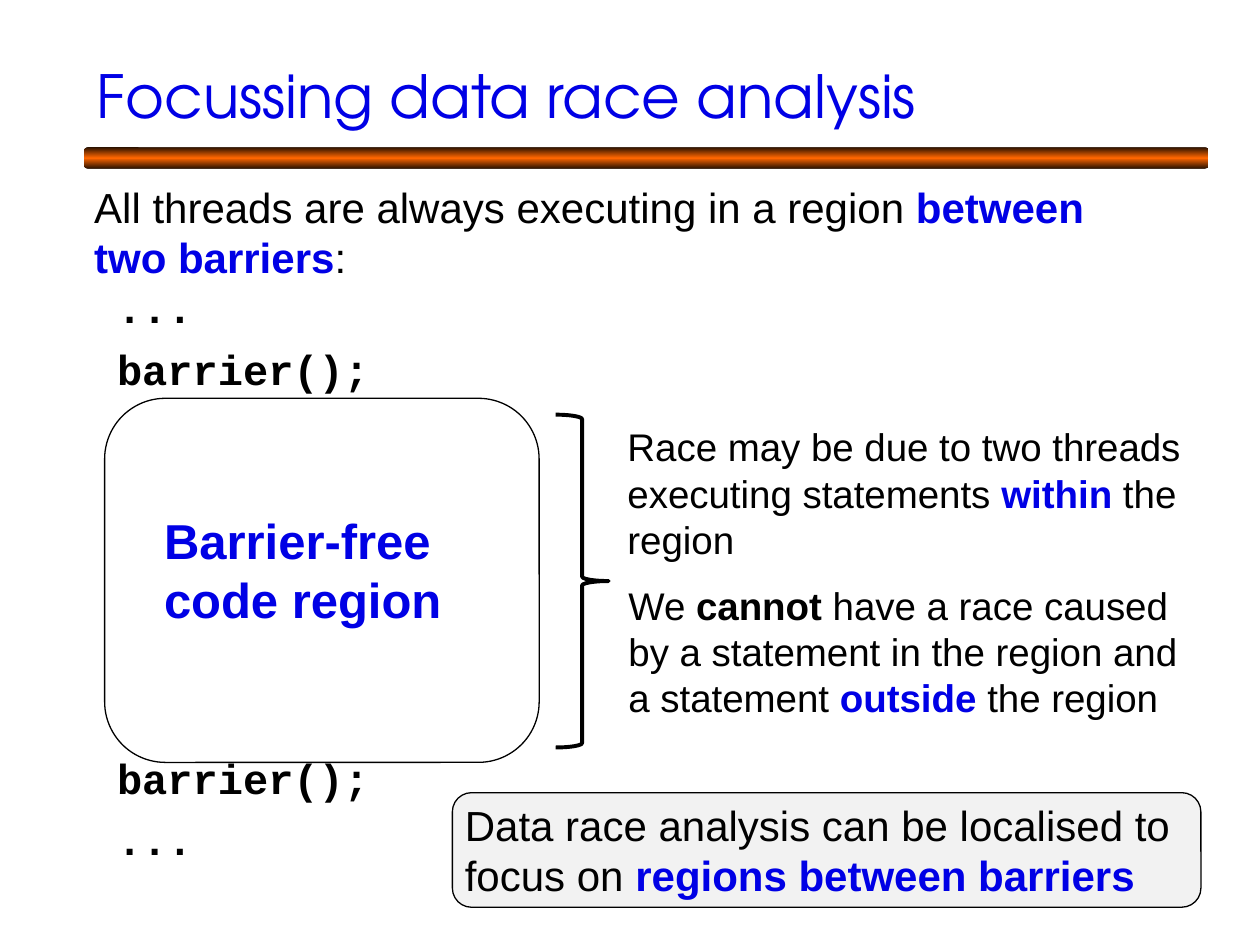
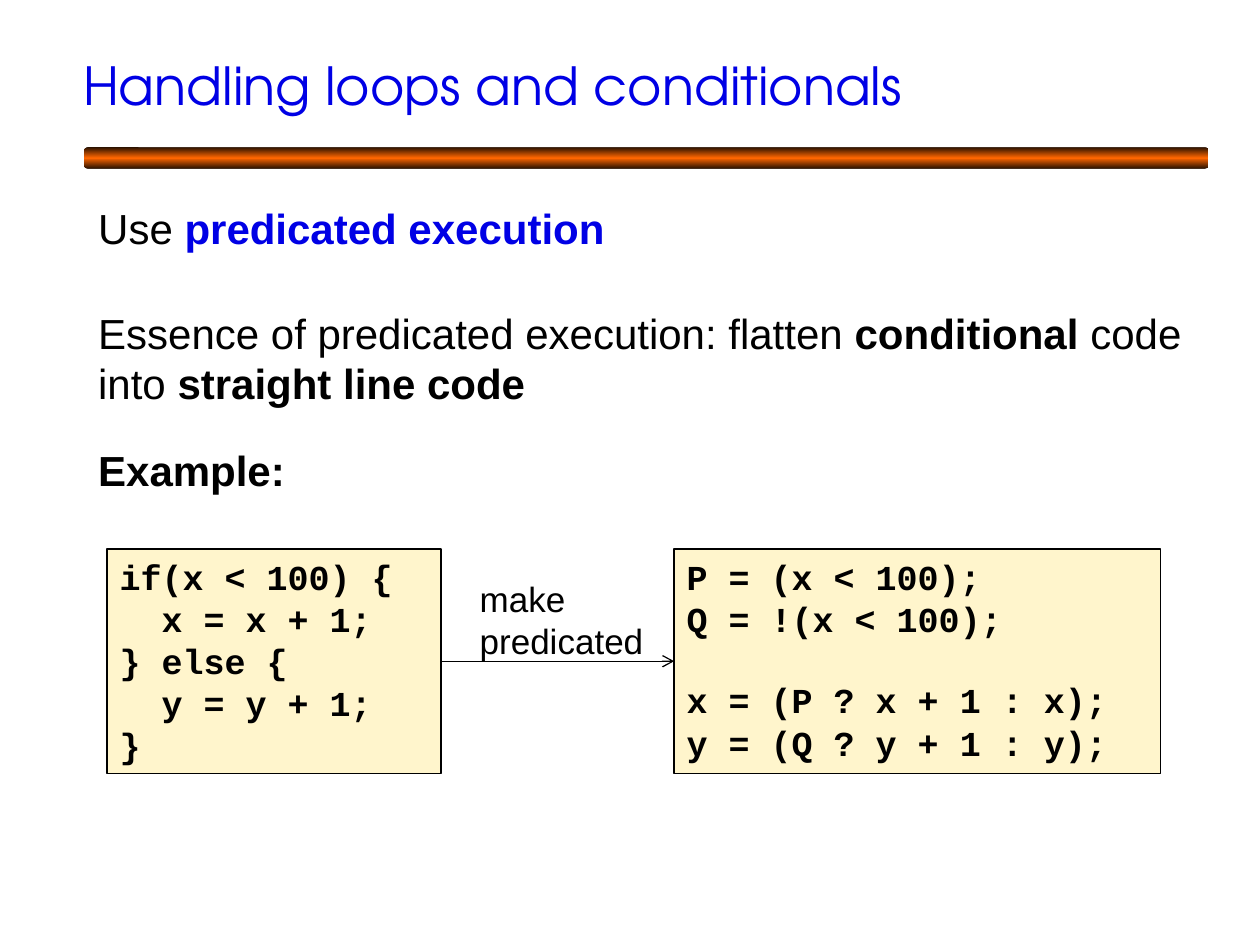
from lxml.etree import SubElement
from pptx import Presentation
from pptx.dml.color import RGBColor
from pptx.enum.shapes import MSO_CONNECTOR as LINE, MSO_SHAPE as SHAPE
from pptx.enum.text import MSO_ANCHOR as ANCHOR, PP_ALIGN as ALIGN
from pptx.oxml.ns import qn
from pptx.util import Cm, Pt

COLORS = {
    "text": "000000",
    "key": "0000E5",
    "line": "000000",
    "region": "FFFFFF",
    "callout": "F2F2F2",
    "code": "FFF5CC",
    "band_edge": "2A1100",
    "band_mid": "FF6600",
}
TITLE_FONT, BODY_FONT, CODE_FONT = "TeX Gyre Adventor", "Arial", "Courier New"
CODE_INDENT = Pt(24)  # two characters of 20 pt code
CODE_LINE = Pt(22.66)  # one line of 20 pt code


def rgb(name):
    return RGBColor.from_string(COLORS[name])


def box(x, y, w, h):
    return Cm(x), Cm(y), Cm(w), Cm(h)


def add_run(p, text, size, font=BODY_FONT, color="text", bold=False):
    r = p.add_run()
    r.text = text
    r.font.name, r.font.size, r.font.bold = font, Pt(size), bold
    r.font.color.rgb = rgb(color)


def write_rich(p, runs, size):
    """Add runs given as (text, style); style is "", "bold" or "key"."""
    p.alignment = ALIGN.LEFT
    for text, style in runs:
        add_run(p, text, size, color="key" if style == "key" else "text",
                bold=style != "")


def write_code(tf, lines, size):
    """Add lines given as (text, indent level, space before)."""
    for i, (text, level, before) in enumerate(lines):
        p = tf.paragraphs[0] if i == 0 else tf.add_paragraph()
        p.alignment = ALIGN.LEFT
        p.space_before = before
        if level:
            p._p.get_or_add_pPr().set("marL", str(level * CODE_INDENT))
        add_run(p, text, size, CODE_FONT, bold=True)


def add_textbox(s, place):
    tf = s.shapes.add_textbox(*box(*place)).text_frame
    tf.word_wrap = True
    return tf


def add_text(s, place, runs, size=24):
    write_rich(add_textbox(s, place).paragraphs[0], runs, size)


def add_outlined(s, kind, place, fill=None, width=0.75):
    sp = s.shapes.add_shape(kind, *box(*place))
    sp.shadow.inherit = False
    if fill:
        sp.fill.solid()
        sp.fill.fore_color.rgb = rgb(fill)
    else:
        sp.fill.background()
    sp.line.color.rgb = rgb("line")
    sp.line.width = Pt(width)
    sp.text_frame.word_wrap = True
    return sp


def add_code_box(s, place, lines):
    sp = add_outlined(s, SHAPE.RECTANGLE, place, "code")
    sp.text_frame.vertical_anchor = ANCHOR.TOP
    write_code(sp.text_frame, lines, 20)
    return sp


def add_arrow(s, start, end):
    """Join the right side of start to the left side of end."""
    c = s.shapes.add_connector(LINE.STRAIGHT, 0, 0, 0, 0)
    c.begin_connect(start, 3)
    c.end_connect(end, 1)
    c.line.color.rgb = rgb("line")
    c.line.width = Pt(0.75)
    SubElement(c.line._get_or_add_ln(), qn("a:tailEnd"), type="arrow")
    SubElement(c._element.spPr, qn("a:effectLst"))


def add_band(s):
    sp = s.shapes.add_shape(SHAPE.ROUNDED_RECTANGLE, *box(1.7, 2.97, 22.66, 0.43))
    sp.shadow.inherit = False
    sp.line.fill.background()
    sp.fill.gradient()
    sp.fill.gradient_angle = 90
    stops = sp.fill._fill._gradFill.find(qn("a:gsLst"))
    for stop in list(stops):
        stops.remove(stop)
    for pos, name in ((0, "band_edge"), (50, "band_mid"), (100, "band_edge")):
        stop = SubElement(stops, qn("a:gs"), pos=str(pos * 1000))
        SubElement(stop, qn("a:srgbClr"), val=COLORS[name])


def add_slide(prs, title, place, size):
    s = prs.slides.add_slide(prs.slide_layouts[5])
    add_band(s)
    sp = s.shapes.title
    sp.left, sp.top, sp.width, sp.height = box(*place)
    tf = sp.text_frame
    tf.word_wrap = True
    tf.vertical_anchor = ANCHOR.MIDDLE
    p = tf.paragraphs[0]
    p.alignment = ALIGN.LEFT
    add_run(p, title, size, TITLE_FONT, "key")
    return s


def build_race_slide(prs):
    s = add_slide(prs, "Focussing data race analysis", (1.7, 0.64, 24.64, 2.54), 34)
    add_text(s, (1.65, 3.53, 21.21, 2.31), [
        ("All threads are always executing in a region ", ""),
        ("between two barriers", "key"), (":", "")])

    for y, lines in ((5.56, ("...", "barrier();")), (15.04, ("barrier();", "..."))):
        tf = add_textbox(s, (2.11, y, 8, 2.7))
        write_code(tf, [(text, 0, Pt(6.4)) for text in lines], 24)

    region = add_outlined(s, SHAPE.ROUNDED_RECTANGLE, (2.11, 8.03, 8.76, 7.34), "region")
    tf = region.text_frame
    tf.margin_left, tf.margin_bottom = Cm(0.84), Cm(0.56)
    write_rich(tf.paragraphs[0], [("Barrier-free code region", "key")], 28)

    add_outlined(s, SHAPE.RIGHT_BRACE, (11.2, 8.36, 1.07, 6.71), width=2.25)
    add_text(s, (12.4, 8.41, 12.32, 3.07), [
        ("Race may be due to two threads executing statements ", ""),
        ("within ", "key"), ("the region", "")], 22)
    add_text(s, (12.42, 11.61, 11.79, 3.07), [
        ("We ", ""), ("cannot", "bold"),
        (" have a race caused by a statement in the region and a statement ", ""),
        ("outside ", "key"), ("the region", "")], 22)

    callout = add_outlined(s, SHAPE.ROUNDED_RECTANGLE, (9.12, 15.98, 15.09, 2.31), "callout")
    tf = callout.text_frame
    tf.margin_left = tf.margin_right = Cm(0.14)
    tf.margin_top = tf.margin_bottom = 0
    write_rich(tf.paragraphs[0], [
        ("Data race analysis can be localised to focus on ", ""),
        ("regions between barriers", "key")], 24)


def build_predication_slide(prs):
    s = add_slide(prs, "Handling loops and conditionals", (1.42, 0.43, 23.06, 2.54), 30)
    add_text(s, (1.73, 3.96, 11.2, 1.27), [("Use ", ""), ("predicated execution", "key")])
    add_text(s, (1.73, 6.07, 22.4, 2.31), [
        ("Essence of predicated execution: flatten ", ""), ("conditional", "bold"),
        (" code into ", ""), ("straight line code", "bold")])
    add_text(s, (1.73, 8.84, 4.42, 1.27), [("Example:", "bold")])

    branching = add_code_box(s, (2.16, 11.07, 6.73, 4.52), [
        ("if(x < 100) {", 0, 0),
        ("x = x + 1;", 1, 0),
        ("} else {", 0, 0),
        ("y = y + 1;", 1, 0),
        ("}", 0, 0)])
    predicated = add_code_box(s, (13.59, 11.07, 9.8, 4.52), [
        ("P = (x < 100);", 0, 0),
        ("Q = !(x < 100);", 0, 0),
        ("x = (P ? x + 1 : x);", 0, CODE_LINE),
        ("y = (Q ? y + 1 : y);", 0, 0)])
    add_arrow(s, branching, predicated)
    add_text(s, (9.42, 11.51, 4.24, 1.96), [("make predicated", "")], 20)


def main():
    prs = Presentation()
    prs.slide_width, prs.slide_height = Cm(25.4), Cm(19.05)
    build_race_slide(prs)
    build_predication_slide(prs)
    prs.save("out.pptx")


if __name__ == "__main__":
    main()
